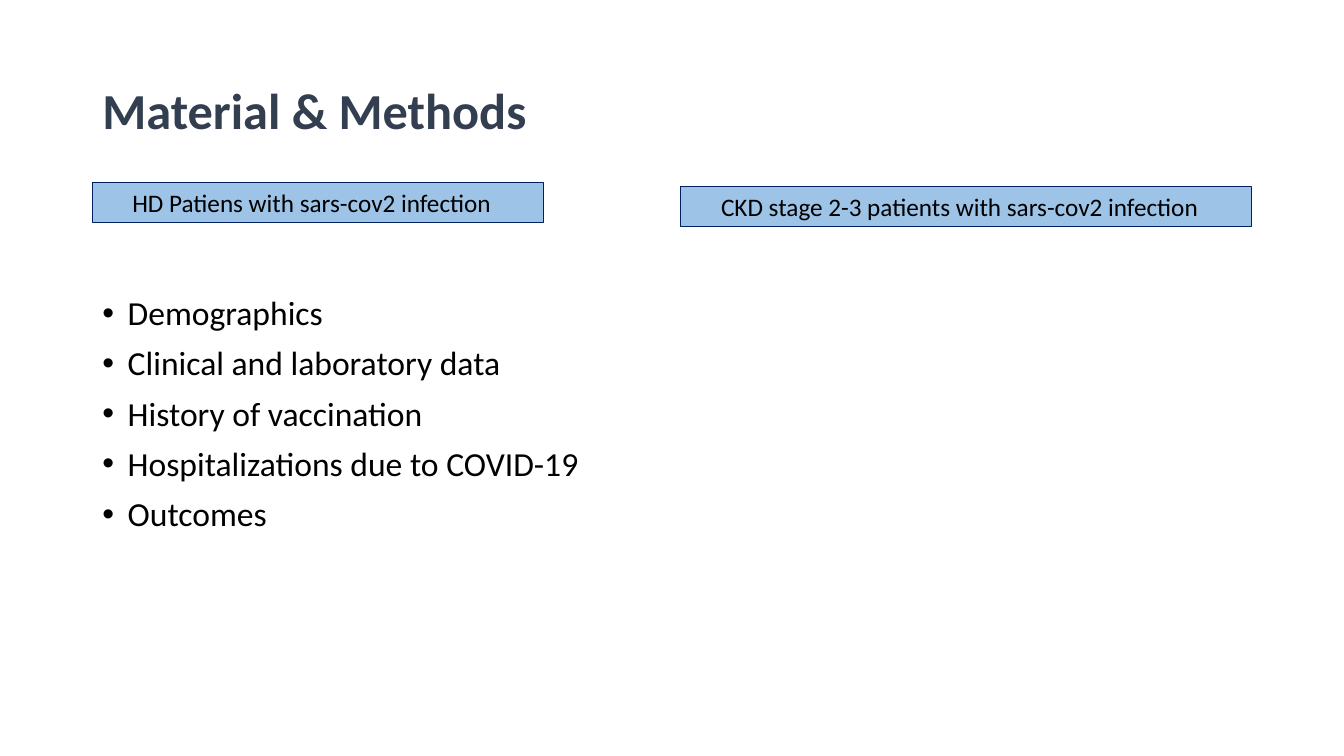
from dataclasses import dataclass

from lxml.etree import SubElement
from pptx import Presentation
from pptx.dml.color import RGBColor
from pptx.enum.shapes import MSO_SHAPE
from pptx.enum.text import MSO_ANCHOR, PP_ALIGN
from pptx.oxml.ns import qn
from pptx.slide import Slide
from pptx.text.text import TextFrame, _Paragraph
from pptx.util import Cm, Pt

SLATE = RGBColor(0x33, 0x3F, 0x50)
BLACK = RGBColor(0x00, 0x00, 0x00)
SKY = RGBColor(0x9D, 0xC3, 0xE6)
NAVY = RGBColor(0x00, 0x20, 0x60)

LEFT = 2.33
TOPICS = [
    "Demographics",
    "Clinical and laboratory data",
    "History of vaccination",
    "Hospitalizations due to COVID-19",
    "Outcomes",
]


@dataclass(frozen=True)
class Group:
    text: str
    left: float
    top: float
    width: float
    height: float = 1.02


GROUPS = [
    Group("HD Patiens with sars-cov2 infection", LEFT, 4.6, 11.36),
    Group("CKD stage 2-3 patients with sars-cov2 infection", 17.14, 4.7, 14.4),
]


def apply_format(target: object, values: dict) -> None:
    for name, value in values.items():
        setattr(target, name, value)


def write(paragraph: _Paragraph, text: str, size: int, color: RGBColor,
          bold: bool = False) -> None:
    run = paragraph.add_run()
    run.text = text
    apply_format(run.font, {"name": "Calibri", "size": Pt(size), "bold": bold})
    run.font.color.rgb = color


def add_frame(slide: Slide, top: float, width: float, height: float) -> TextFrame:
    box = slide.shapes.add_textbox(Cm(LEFT), Cm(top), Cm(width), Cm(height))
    box.text_frame.word_wrap = True
    return box.text_frame


def add_title(slide: Slide, text: str) -> None:
    frame = add_frame(slide, 1.01, 29.21, 3.68)
    frame.vertical_anchor = MSO_ANCHOR.MIDDLE
    paragraph = frame.paragraphs[0]
    paragraph.line_spacing = 0.9
    write(paragraph, text, 36, SLATE, bold=True)


def add_bullet(paragraph: _Paragraph) -> None:
    properties = paragraph._p.get_or_add_pPr()
    properties.set("marL", str(Cm(0.64)))
    properties.set("indent", str(-Cm(0.64)))
    SubElement(properties, qn("a:buFont"), typeface="Arial")
    SubElement(properties, qn("a:buChar"), char="•")


def add_topics(slide: Slide, topics: list[str]) -> None:
    frame = add_frame(slide, 6.05, 27.86, 11.97)
    frame.margin_top = Cm(1.42)
    for index, topic in enumerate(topics):
        paragraph = frame.add_paragraph() if index else frame.paragraphs[0]
        apply_format(paragraph, {
            "alignment": PP_ALIGN.JUSTIFY,
            "line_spacing": 0.9,
            "space_before": Pt(10 if index else 0),
        })
        add_bullet(paragraph)
        write(paragraph, topic, 24, BLACK)


def add_group(slide: Slide, group: Group) -> None:
    shape = slide.shapes.add_shape(
        MSO_SHAPE.RECTANGLE, Cm(group.left), Cm(group.top),
        Cm(group.width), Cm(group.height))
    shape.shadow.inherit = False
    shape.fill.solid()
    shape.fill.fore_color.rgb = SKY
    shape.line.color.rgb = NAVY
    shape.line.width = Pt(0.75)
    apply_format(shape.text_frame, {
        "word_wrap": True,
        "vertical_anchor": MSO_ANCHOR.MIDDLE,
        "margin_right": Cm(0.56),
    })
    paragraph = shape.text_frame.paragraphs[0]
    paragraph.alignment = PP_ALIGN.CENTER
    write(paragraph, group.text, 18, BLACK)


def main() -> None:
    presentation = Presentation()
    apply_format(presentation, {"slide_width": Cm(33.87), "slide_height": Cm(19.05)})
    slide = presentation.slides.add_slide(presentation.slide_layouts[6])
    add_title(slide, "Material & Methods")
    add_topics(slide, TOPICS)
    for group in GROUPS:
        add_group(slide, group)
    presentation.save("out.pptx")


if __name__ == "__main__":
    main()
